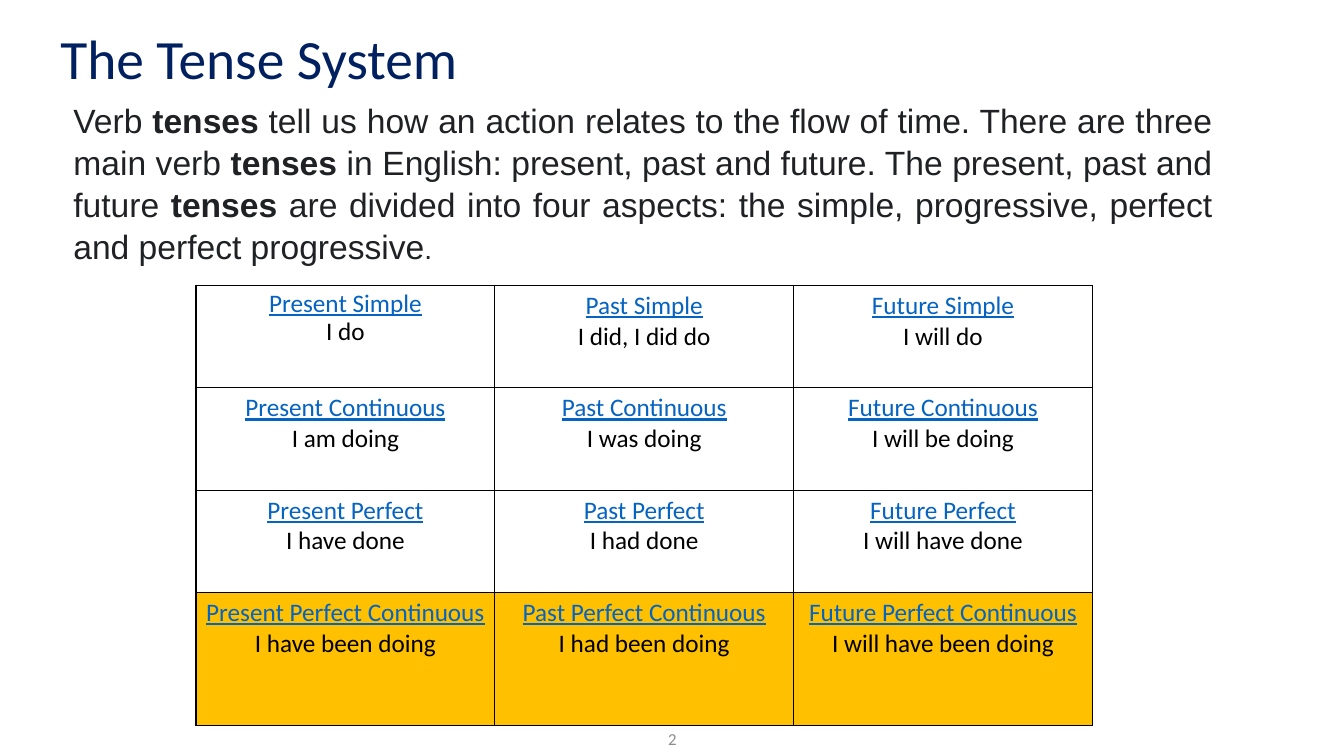
from lxml import etree
from pptx import Presentation
from pptx.dml.color import RGBColor
from pptx.enum.text import MSO_ANCHOR, PP_ALIGN
from pptx.oxml.ns import qn
from pptx.util import Cm, Pt

CENTER, JUSTIFY, LEFT = PP_ALIGN.CENTER, PP_ALIGN.JUSTIFY, PP_ALIGN.LEFT
TOP, MIDDLE = MSO_ANCHOR.TOP, MSO_ANCHOR.MIDDLE

NAVY = RGBColor(0x00, 0x20, 0x60)
CHARCOAL = RGBColor(0x20, 0x21, 0x24)
LINK_BLUE = RGBColor(0x05, 0x63, 0xC1)
BLACK = RGBColor(0x00, 0x00, 0x00)
WHITE = RGBColor(0xFF, 0xFF, 0xFF)
AMBER = RGBColor(0xFF, 0xC0, 0x00)
GRAY = RGBColor(0x8C, 0x8C, 0x8C)

INTRODUCTION = [
    ("Verb ", False),
    ("tenses", True),
    (" tell us how an action relates to the flow of time. "
     "There are three main verb ", False),
    ("tenses", True),
    (" in English: present, past and future. "
     "The present, past and future ", False),
    ("tenses", True),
    (" are divided into four aspects: the simple, progressive, "
     "perfect and perfect progressive", False),
]
TIMES = ["Present", "Past", "Future"]
ASPECTS = [
    ("Simple", ["I do", "I did, I did do", "I will do"]),
    ("Continuous", ["I am doing", "I was doing", "I will be doing"]),
    ("Perfect", ["I have done", "I had done", "I will have done"]),
    ("Perfect Continuous",
     ["I have been doing", "I had been doing", "I will have been doing"]),
]
ROW_HEIGHTS = [Cm(2.58), Cm(2.58), Cm(2.58), Cm(3.36)]


def style_font(font, name, size, color):
    font.name = name
    font.size = Pt(size)
    font.color.rgb = color


def add_text_box(slide, box, anchor, alignment):
    """Add an empty wrapping text box and return its first paragraph."""
    frame = slide.shapes.add_textbox(*box).text_frame
    frame.word_wrap = True
    frame.vertical_anchor = anchor
    paragraph = frame.paragraphs[0]
    paragraph.alignment = alignment
    return paragraph


def add_title(slide, box):
    paragraph = add_text_box(slide, box, MIDDLE, LEFT)
    paragraph.line_spacing = 0.9
    paragraph.add_run().text = "The Tense System"
    style_font(paragraph.font, "Calibri", 39.6, NAVY)


def add_introduction(slide, box):
    paragraph = add_text_box(slide, box, TOP, JUSTIFY)
    paragraph.line_spacing = 1.04
    style_font(paragraph.font, "Arial", 24, CHARCOAL)
    for text, bold in INTRODUCTION:
        run = paragraph.add_run()
        run.text = text
        run.font.bold = bold
    full_stop = paragraph.add_run()
    full_stop.text = "."
    full_stop.font.size = Pt(20)


def add_borders(cell):
    properties = cell._tc.get_or_add_tcPr()
    for position, side in enumerate(("a:lnL", "a:lnR", "a:lnT", "a:lnB")):
        line = etree.Element(qn(side), w=str(Pt(1)))
        fill = etree.SubElement(line, qn("a:solidFill"))
        etree.SubElement(fill, qn("a:srgbClr"), val=str(BLACK))
        properties.insert(position, line)


def fill_cell(cell, tense, example, color):
    cell.fill.solid()
    cell.fill.fore_color.rgb = color
    cell.margin_left = cell.margin_right = Cm(0.2)
    add_borders(cell)
    paragraph = cell.text_frame.paragraphs[0]
    paragraph.alignment = CENTER
    name = paragraph.add_run()
    name.text = tense
    paragraph.add_line_break()
    sentence = paragraph.add_run()
    sentence.text = example
    style_font(name.font, "Calibri", 18, LINK_BLUE)
    style_font(sentence.font, "Calibri", 18, BLACK)
    name.font.underline = True


def add_tense_table(slide, box):
    table = slide.shapes.add_table(len(ASPECTS), len(TIMES), *box).table
    table.first_row = False
    table.horz_banding = False
    for row, height in zip(table.rows, ROW_HEIGHTS):
        row.height = height
    for row, (aspect, examples) in enumerate(ASPECTS):
        color = AMBER if aspect == "Perfect Continuous" else WHITE
        for column, (time, example) in enumerate(zip(TIMES, examples)):
            fill_cell(table.cell(row, column), f"{time} {aspect}", example, color)
    table.cell(0, 0).text_frame.paragraphs[0].line_spacing = 0.9


def add_slide_number(slide, box):
    paragraph = add_text_box(slide, box, MIDDLE, CENTER)
    paragraph.add_run().text = "2"
    style_font(paragraph.font, "Calibri", 12, GRAY)


def main():
    presentation = Presentation()
    presentation.slide_width = Cm(33.87)
    presentation.slide_height = Cm(19.05)
    slide = presentation.slides.add_slide(presentation.slide_layouts[6])
    add_title(slide, (Cm(1.27), Cm(0.74), Cm(29.21), Cm(1.6)))
    add_introduction(slide, (Cm(1.6), Cm(2.36), Cm(29.21), Cm(16.26)))
    add_tense_table(slide, (Cm(4.94), Cm(7.19), Cm(22.59), sum(ROW_HEIGHTS)))
    add_slide_number(slide, (Cm(11.23), Cm(18.1), Cm(11.43), Cm(1.02)))
    presentation.save("out.pptx")


if __name__ == "__main__":
    main()
